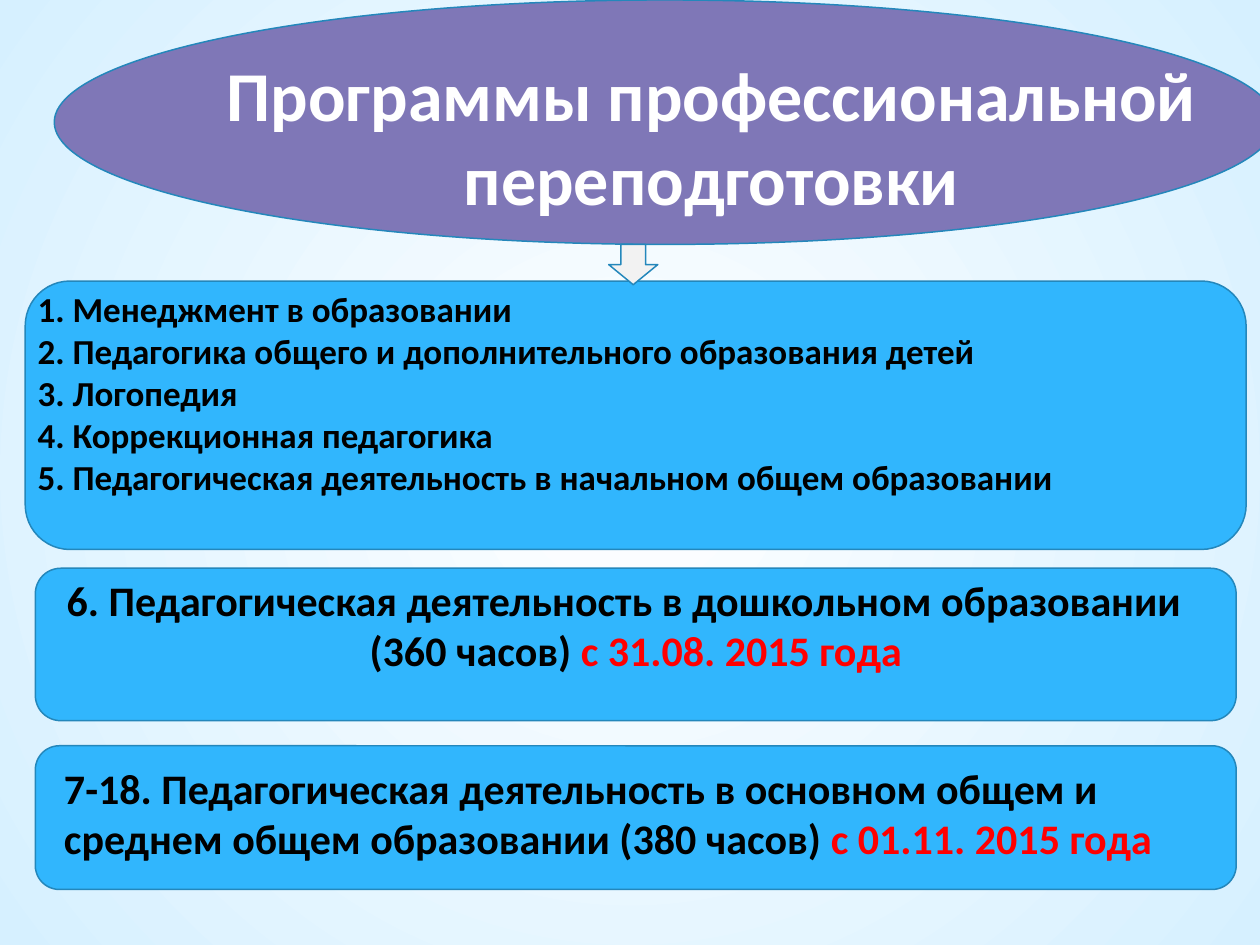
import pptx
import pptx.util
import pptx.dml.color
import pptx.enum.shapes
import pptx.enum.text
import pptx.oxml
import pptx.oxml.ns

Pt = pptx.util.Pt
SHAPE = pptx.enum.shapes.MSO_SHAPE
ALIGN = pptx.enum.text.PP_ALIGN

COLORS = {
    "white": "FFFFFF",
    "edge": "D6F0FF",
    "violet": "7F77B7",
    "blue": "31B6FD",
    "outline": "2487BB",
    "arrow": "F2F2F2",
    "black": "000000",
    "red": "FF0000",
}


def rgb(name):
    return pptx.dml.color.RGBColor.from_string(COLORS[name])


class ProgramSlide:
    """Holds the text style and the slide being filled."""

    font = "Calibri"
    line_width = 0.85

    def __init__(self, presentation):
        self.slide = presentation.slides.add_slide(presentation.slide_layouts[5])

    def radial_background(self, center, edge):
        fill = self.slide.background.fill
        fill.gradient()
        for stop, color, position in zip(fill.gradient_stops, (center, edge), (0, 1)):
            stop.color.rgb = rgb(color)
            stop.position = position
        gradient = self.slide.element.find(".//" + pptx.oxml.ns.qn("a:gradFill"))
        linear = gradient.find(pptx.oxml.ns.qn("a:lin"))
        gradient.replace(linear, pptx.oxml.parse_xml(
            f'<a:path {pptx.oxml.ns.nsdecls("a")} path="circle">'
            '<a:fillToRect l="50000" t="50000" r="50000" b="50000"/></a:path>'))

    def shape(self, kind, box, color):
        figure = self.slide.shapes.add_shape(kind, *map(Pt, box))
        figure.shadow.inherit = False
        figure.fill.solid()
        figure.fill.fore_color.rgb = rgb(color)
        figure.line.color.rgb = rgb("outline")
        figure.line.width = Pt(self.line_width)
        return figure

    def style_run(self, run, size, color):
        run.font.name = self.font
        run.font.size = Pt(size)
        run.font.bold = True
        run.font.color.rgb = rgb(color)

    def title(self, wording, box, size, backdrop):
        """Places the title just above its backdrop shape."""
        heading = self.slide.shapes.title
        heading.left, heading.top, heading.width, heading.height = map(Pt, box)
        backdrop.element.addnext(heading.element)
        frame = heading.text_frame
        frame.text = wording
        frame.word_wrap = True
        frame.auto_size = pptx.enum.text.MSO_AUTO_SIZE.NONE
        frame.vertical_anchor = pptx.enum.text.MSO_ANCHOR.TOP
        frame.paragraphs[0].alignment = ALIGN.CENTER
        self.style_run(frame.paragraphs[0].runs[0], size, "white")

    def text(self, lines, box, size):
        """Each line is (alignment, wording, red ending)."""
        frame = self.slide.shapes.add_textbox(*map(Pt, box)).text_frame
        frame.word_wrap = True
        frame.text = "\n".join(wording for _, wording, _ in lines)
        for paragraph, (alignment, _, ending) in zip(frame.paragraphs, lines):
            paragraph.alignment = alignment
            self.style_run(paragraph.runs[0], size, "black")
            if ending:
                date = paragraph.add_run()
                date.text = ending
                self.style_run(date, size, "red")


def main():
    presentation = pptx.Presentation()
    presentation.slide_width, presentation.slide_height = Pt(720), Pt(540)
    programs = ProgramSlide(presentation)
    programs.radial_background("white", "edge")

    header = programs.shape(SHAPE.OVAL, (31, 0, 697.7, 139.7), "violet")
    programs.title("Программы профессиональной переподготовки",
                   (117.4, 25.9, 578.2, 104.4), 40, header)

    courses = [
        "1. Менеджмент в образовании",
        "2. Педагогика общего и дополнительного образования детей",
        "3. Логопедия",
        "4. Коррекционная педагогика",
        "5. Педагогическая деятельность в начальном общем образовании",
    ]
    preschool = [
        (ALIGN.LEFT, "6. Педагогическая деятельность в дошкольном образовании", ""),
        (ALIGN.CENTER, "(360 часов) ", "с 31.08. 2015 года"),
    ]
    secondary = [
        (ALIGN.LEFT, "7-18. Педагогическая деятельность в основном общем и "
                     "среднем общем образовании (380 часов) ", "с 01.11. 2015 года"),
    ]
    panels = [
        ((14.4, 160.6, 697.7, 153.4), (14.4, 160.6, 697.7, 157.7), 20,
         [(ALIGN.LEFT, course, "") for course in courses]),
        ((20.2, 324.7, 686.2, 87.1), (31, 324.7, 664.6, 87.1), 24, preschool),
        ((20.2, 426.2, 686.2, 82.1), (29.5, 432, 664.6, 76), 24, secondary),
    ]
    for panel_box, text_box, size, lines in panels:
        programs.shape(SHAPE.ROUNDED_RECTANGLE, panel_box, "blue")
        programs.text(lines, text_box, size)

    programs.shape(SHAPE.DOWN_ARROW, (347.8, 139.7, 28.1, 23), "arrow")
    presentation.save("out.pptx")


if __name__ == "__main__":
    main()
